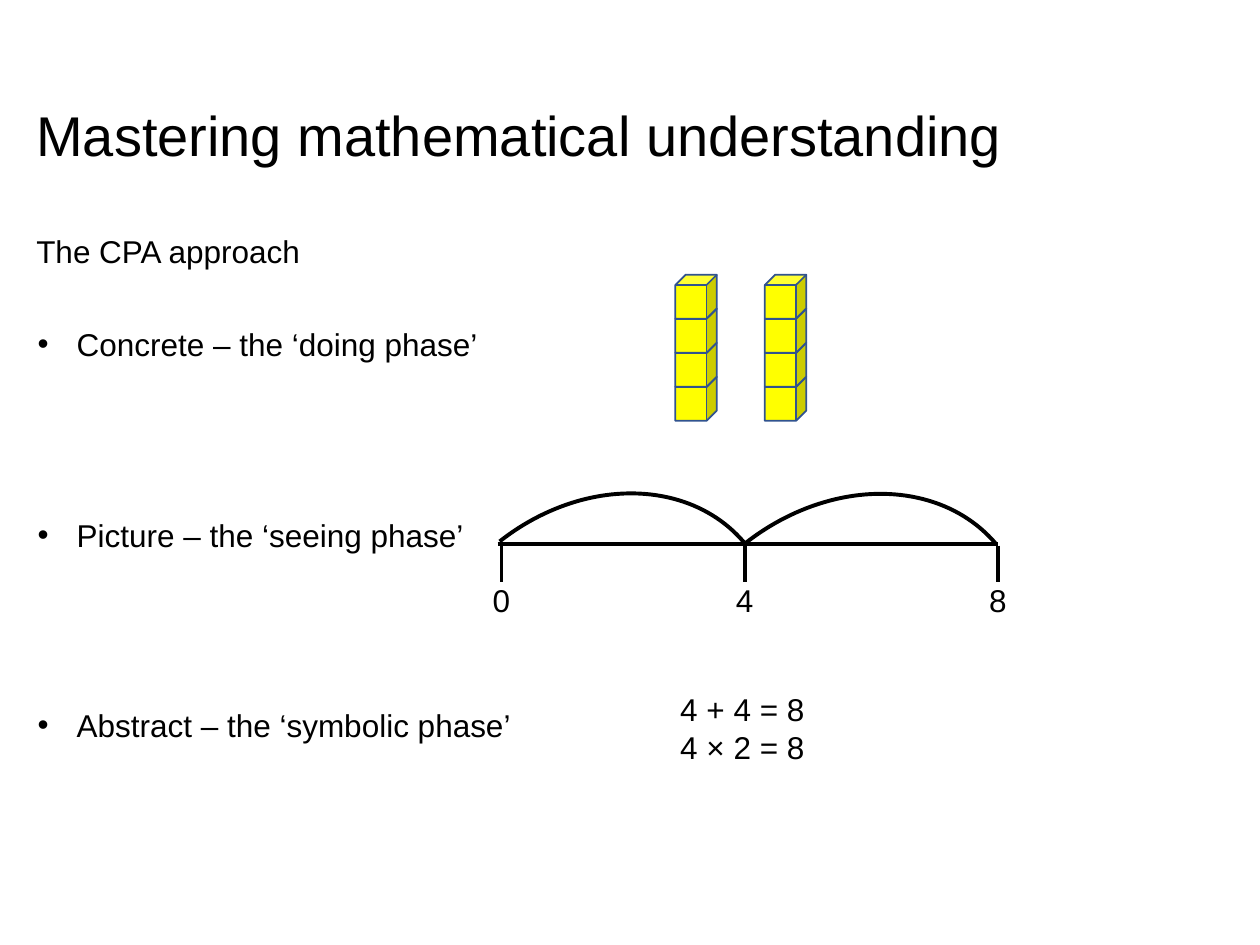
from lxml import etree
from pptx import Presentation
from pptx.dml.color import RGBColor
from pptx.enum.shapes import MSO_CONNECTOR, MSO_SHAPE
from pptx.enum.text import PP_ALIGN
from pptx.oxml.ns import qn
from pptx.util import Inches, Pt

LINE = MSO_CONNECTOR.STRAIGHT
CUBE, ARC = MSO_SHAPE.CUBE, MSO_SHAPE.ARC
LEFT, CENTER = PP_ALIGN.LEFT, PP_ALIGN.CENTER


def rgb(value):
    return RGBColor.from_string(value)


def add_text(box, lines, size=18, align=LEFT):
    tf = s.shapes.add_textbox(*map(Inches, box)).text_frame
    tf.word_wrap = True
    for i, line in enumerate(lines):
        p = tf.paragraphs[0] if i == 0 else tf.add_paragraph()
        p.alignment = align
        r = p.add_run()
        r.text = line
        for name, value in {"name": "Arial", "size": Pt(size)}.items():
            setattr(r.font, name, value)
        r.font.color.rgb = rgb("000000")
    return tf


prs = Presentation()
prs.slide_width, prs.slide_height = Inches(10), Inches(7.5)
s = prs.slides.add_slide(prs.slide_layouts[6])

add_text((0.19, 0.75, 9.8, 0.64), ["Mastering mathematical understanding"], 32)
add_text((0.19, 1.79, 4.3, 0.4), ["The CPA approach"])

phases = ["Concrete – the ‘doing phase’", "Picture – the ‘seeing phase’", "Abstract – the ‘symbolic phase’"]
tf = add_text((0.2, 2.53, 4.6, 3.5), phases)
for i, p in enumerate(tf.paragraphs):
    p.space_before = Pt(87.3 if i else 0)
    pPr = p._p.get_or_add_pPr()
    pPr.set("marL", str(Inches(0.31)))
    pPr.set("indent", str(Inches(-0.31)))
    etree.SubElement(pPr, qn("a:buFont")).set("typeface", "Arial")
    etree.SubElement(pPr, qn("a:buChar")).set("char", "•")

for x in (5.36, 6.07):
    stack = s.shapes.add_group_shape()
    for i in range(4):
        box = (x, 2.99 - 0.27 * i, 0.33, 0.35)
        sp = stack.shapes.add_shape(CUBE, *map(Inches, box))
        sp.shadow.inherit = False
        sp.fill.solid()
        sp.fill.fore_color.rgb = rgb("FFFF00")
        sp.line.color.rgb = rgb("31538F")
        sp.line.width = Pt(1)

ticks = {"0": 3.98, "4": 5.91, "8": 7.92}
number_line = [(3.95, 4.32, 7.92, 4.32)] + [(x, 4.33, x, 4.62) for x in ticks.values()]
for ends in number_line:
    sp = s.shapes.add_connector(LINE, *map(Inches, ends))
    sp.line.color.rgb = rgb("000000")
    sp.line.width = Pt(2.25)
    etree.SubElement(sp._element.spPr, qn("a:effectLst"))

for label, x in ticks.items():
    add_text((x - 0.3, 4.56, 0.6, 0.42), [label], align=CENTER)

for box in ((3.19, 4.04, 3.08, 2.52), (5.11, 4.05, 3.17, 2.58)):
    sp = s.shapes.add_shape(ARC, *map(Inches, box))
    sp.shadow.inherit = False
    sp.adjustments[0] = 163.8
    sp.adjustments[1] = 0
    sp.rotation = 319.7
    sp.fill.background()
    sp.line.color.rgb = rgb("000000")
    sp.line.width = Pt(2.25)

add_text((5.3, 5.43, 4.32, 0.71), ["4 + 4 = 8", "4 × 2 = 8"])

prs.save("out.pptx")
